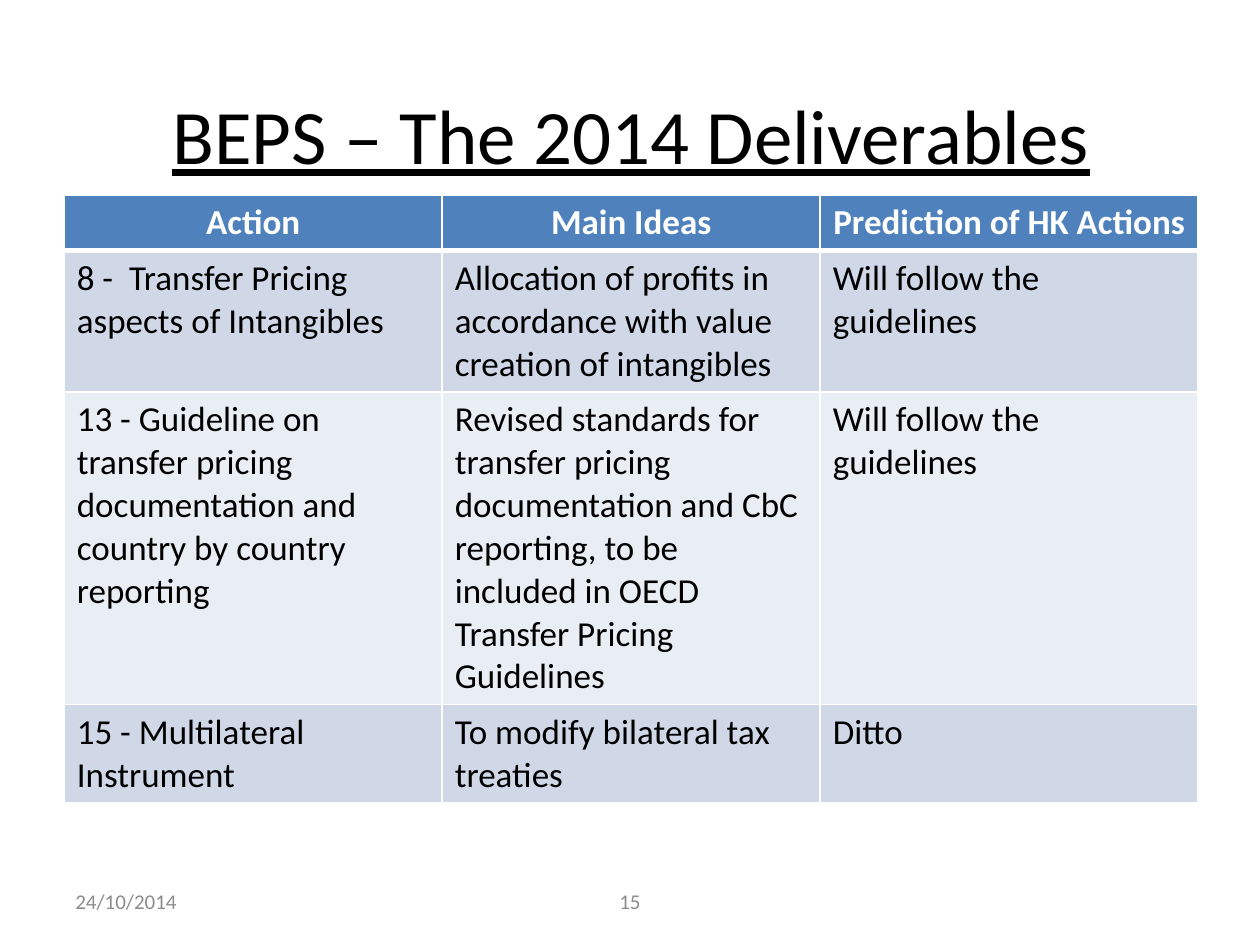
from dataclasses import dataclass

from lxml.etree import SubElement
from pptx import Presentation
from pptx.dml.color import RGBColor
from pptx.enum.text import MSO_ANCHOR, PP_ALIGN
from pptx.oxml.ns import qn
from pptx.util import Inches, Pt


@dataclass(frozen=True)
class Theme:
    font: str = "Calibri"
    ink: str = "000000"
    white: str = "FFFFFF"
    muted: str = "8C8C8C"
    header: str = "4F81BD"
    bands: tuple = ("D0D8E8", "E9EDF4")
    title_size: int = 44
    table_size: int = 20
    footer_size: int = 12
    rule: int = 1
    header_rule: int = 3


THEME = Theme()
WIDTH, HEIGHT = Inches(10), Inches(7.5)
ROW_HEIGHTS = (0.44, 1.12, 2.48, 0.78)
ROWS = (
    ("Action", "Main Ideas", "Prediction of HK Actions"),
    (
        "8 -  Transfer Pricing aspects of Intangibles",
        "Allocation of profits in accordance with value creation of intangibles",
        "Will follow the guidelines",
    ),
    (
        "13 - Guideline on transfer pricing documentation and country by country reporting",
        "Revised standards for transfer pricing documentation and CbC reporting, "
        "to be included in OECD Transfer Pricing Guidelines",
        "Will follow the guidelines",
    ),
    ("15 - Multilateral Instrument", "To modify bilateral tax treaties", "Ditto"),
)


def set_attributes(target, values):
    for name, value in values.items():
        setattr(target, name, value)


def write_text(frame, text, size, color, align=PP_ALIGN.LEFT, **font_values):
    para = frame.paragraphs[0]
    para.alignment = align
    span = para.add_run()
    span.text = text
    values = {"name": THEME.font, "size": Pt(size), **font_values}
    set_attributes(span.font, values)
    span.font.color.rgb = RGBColor.from_string(color)


def add_title(page, text):
    title = page.shapes.title
    place = {"left": Inches(0.51), "top": Inches(0.44),
             "width": Inches(9), "height": Inches(1.25)}
    set_attributes(title, place)
    write_text(title.text_frame, text, THEME.title_size, THEME.ink,
               PP_ALIGN.CENTER, underline=True)


def set_borders(cell, bottom_width):
    properties = cell._tc.get_or_add_tcPr()
    widths = {"lnL": THEME.rule, "lnR": THEME.rule,
              "lnT": THEME.rule, "lnB": bottom_width}
    for side, width in widths.items():
        line = SubElement(properties, qn(f"a:{side}"), w=str(Pt(width)))
        fill = SubElement(line, qn("a:solidFill"))
        SubElement(fill, qn("a:srgbClr"), val=THEME.white)


def format_cell(cell, text, row_index):
    is_header = row_index == 0
    set_borders(cell, THEME.header_rule if is_header else THEME.rule)
    cell.fill.solid()
    fill = THEME.header if is_header else THEME.bands[(row_index - 1) % 2]
    cell.fill.fore_color.rgb = RGBColor.from_string(fill)
    write_text(cell.text_frame, text, THEME.table_size,
               THEME.white if is_header else THEME.ink,
               PP_ALIGN.CENTER if is_header else PP_ALIGN.LEFT, bold=is_header)


def add_actions_table(page):
    table = page.shapes.add_table(
        len(ROWS), len(ROWS[0]), Inches(0.51), Inches(1.55),
        Inches(9), Inches(sum(ROW_HEIGHTS))).table
    for row_index, (texts, height) in enumerate(zip(ROWS, ROW_HEIGHTS)):
        table.rows[row_index].height = Inches(height)
        for column_index, text in enumerate(texts):
            format_cell(table.cell(row_index, column_index), text, row_index)


def add_footer(page, text, left, width, align):
    box = page.shapes.add_textbox(left, Inches(6.95), width, Inches(0.4))
    frame = box.text_frame
    set_attributes(frame, {"word_wrap": True, "vertical_anchor": MSO_ANCHOR.MIDDLE})
    write_text(frame, text, THEME.footer_size, THEME.muted, align)


def main():
    deck = Presentation()
    set_attributes(deck, {"slide_width": WIDTH, "slide_height": HEIGHT})
    page = deck.slides.add_slide(deck.slide_layouts.get_by_name("Title Only"))
    add_title(page, "BEPS – The 2014 Deliverables")
    add_actions_table(page)
    add_footer(page, "24/10/2014", Inches(0.5), Inches(2.33), PP_ALIGN.LEFT)
    add_footer(page, "15", 0, WIDTH, PP_ALIGN.CENTER)
    deck.save("out.pptx")


if __name__ == "__main__":
    main()
